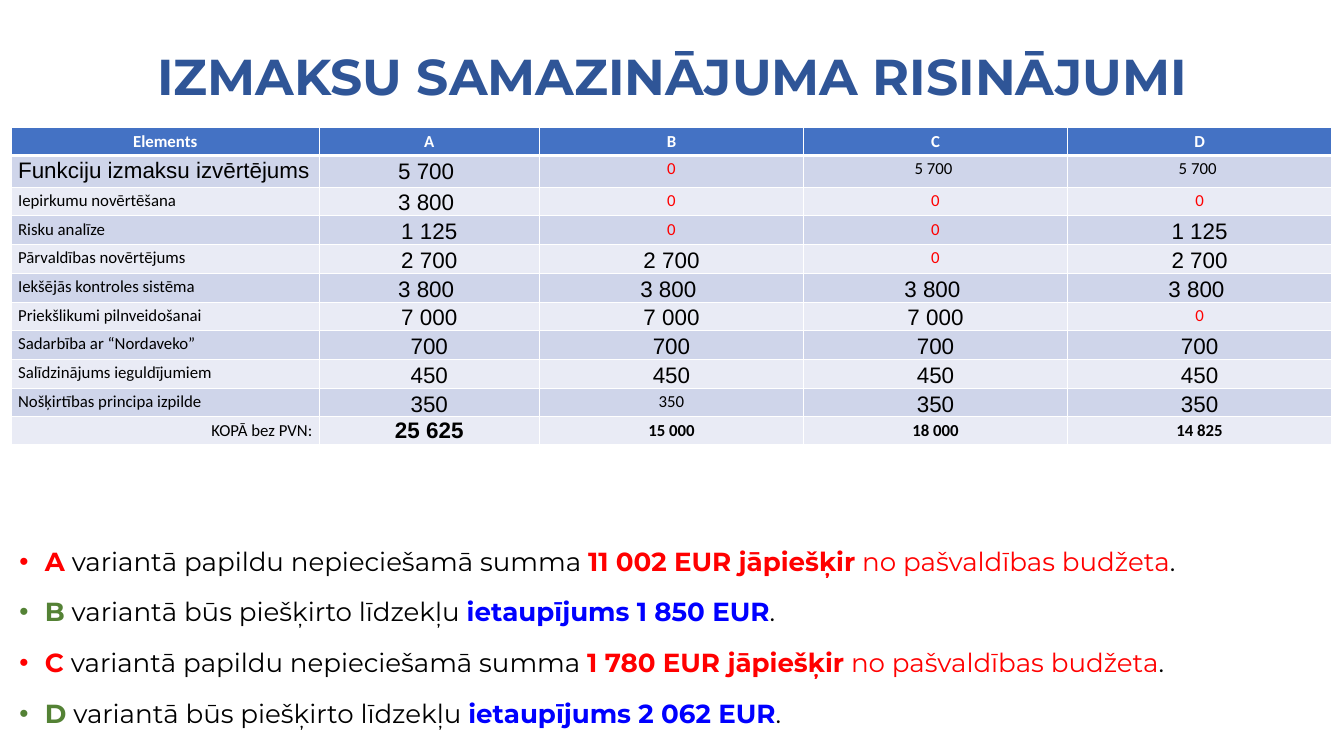
import pptx
import pptx.util
import pptx.dml.color
import pptx.enum.text
import pptx.oxml.ns
import lxml.etree

Cm = pptx.util.Cm
Pt = pptx.util.Pt
ALIGN = pptx.enum.text.PP_ALIGN
MID = pptx.enum.text.MSO_ANCHOR.MIDDLE
TOP = pptx.enum.text.MSO_ANCHOR.TOP
BLACK, WHITE, RED, GREEN, BLUE = "000000", "FFFFFF", "FF0000", "548235", "0000FF"

ROWS = [
    ["Elements", "A", "B", "C", "D"],
    ["Funkciju izmaksu izvērtējums", "5 700 ", "0", "5 700 ", "5 700 "],
    ["Iepirkumu novērtēšana", "3 800 ", "0", "0", "0"],
    ["Risku analīze", "1 125", "0", "0", "1 125"],
    ["Pārvaldības novērtējums", "2 700", "2 700", "0", "2 700"],
    ["Iekšējās kontroles sistēma"] + ["3 800 "] * 4,
    ["Priekšlikumi pilnveidošanai", "7 000", "7 000", "7 000", "0"],
    ["Sadarbība ar “Nordaveko”"] + ["700"] * 4,
    ["Salīdzinājums ieguldījumiem"] + ["450"] * 4,
    ["Nošķirtības principa izpilde"] + ["350"] * 4,
    ["KOPĀ bez PVN:", "25 625", "15 000", "18 000", "14 825"],
]
LAST = len(ROWS) - 1
SMALL = {(1, 3), (1, 4), (9, 2), (LAST, 2), (LAST, 3), (LAST, 4)}
WIDTHS = [11.63, 8.33, 9.98, 9.98, 9.98]

NEED = " variantā papildu nepieciešamā summa "
SAVE = " variantā būs piešķirto līdzekļu "
FROM = " no pašvaldības budžeta"
NOTES = [
    [("A", RED, True), (NEED, BLACK, False), ("11 002 EUR jāpiešķir", RED, True),
     (FROM, RED, False), (".", BLACK, False)],
    [("B", GREEN, True), (SAVE, BLACK, False), ("ietaupījums 1 850 EUR", BLUE, True),
     (".", BLACK, False)],
    [("C", RED, True), (NEED, BLACK, False), ("1 780 EUR jāpiešķir", RED, True),
     (FROM, RED, False), (".", BLACK, False)],
    [("D", GREEN, True), (SAVE, BLACK, False), ("ietaupījums 2 062 EUR", BLUE, True),
     (".", BLACK, False)],
]


def paint(color):
    return pptx.dml.color.RGBColor.from_string(color)


def apply(item, form):
    for key, value in form.items():
        setattr(item, key, value)


def add(node, tag, **attrs):
    return lxml.etree.SubElement(node, pptx.oxml.ns.qn(tag), **attrs)


class Deck:
    body = {"name": "Calibri", "size": Pt(18)}
    large = {"name": "Arial", "size": Pt(24)}
    head = {"name": "Montserrat", "size": Pt(54)}
    note = {"name": "Montserrat", "size": Pt(28)}

    def __init__(self, slide):
        self.slide = slide

    def words(self, para, text, form, color, bold=False):
        run = para.add_run()
        run.text = text
        apply(run.font, {**form, "bold": bold})
        run.font.color.rgb = paint(color)

    def title(self, text, box):
        shape = self.slide.shapes.title
        apply(shape, dict(zip(("left", "top", "width", "height"), map(Cm, box))))
        frame = shape.text_frame
        apply(frame, {"word_wrap": True, "vertical_anchor": MID, "margin_top": Cm(1.2),
                      "margin_bottom": 0, "auto_size": pptx.enum.text.MSO_AUTO_SIZE.NONE})
        para = frame.paragraphs[0]
        apply(para, {"alignment": ALIGN.CENTER, "line_spacing": 0.9})
        self.words(para, text, self.head, "2F5597", True)

    def border(self, cell, top):
        props = cell._tc.get_or_add_tcPr()
        for side in "LRTB":
            wide = 3 if top and side == "B" else 1
            line = add(props, "a:ln" + side, w=str(Pt(wide)))
            add(add(line, "a:solidFill"), "a:srgbClr", val=WHITE)

    def cell(self, cell, row, col, text):
        self.border(cell, row == 0)
        cell.fill.solid()
        cell.fill.fore_color.rgb = paint(
            "4472C4" if row == 0 else "CFD5EA" if row % 2 else "E9EBF5")
        zero = text == "0"
        wide = row > 0 and col > 0 and not zero and (row, col) not in SMALL
        para = cell.text_frame.paragraphs[0]
        para.alignment = ALIGN.CENTER
        if col == 0 and row > 0:
            para.alignment = ALIGN.RIGHT if row == LAST else ALIGN.LEFT
        if wide:
            apply(cell, {"margin_left": Cm(0.18), "margin_right": Cm(0.18),
                         "margin_top": 0, "margin_bottom": 0,
                         "vertical_anchor": MID if row == LAST else TOP})
            if row < LAST:
                para.line_spacing = 1.15
        form = self.large if wide or (row, col) == (1, 0) else self.body
        color = WHITE if row == 0 else RED if zero else BLACK
        self.words(para, text, form, color, row == 0 or (row == LAST and col > 0))

    def table(self, rows, widths, left, top, high):
        frame = self.slide.shapes.add_table(
            len(rows), len(widths), Cm(left), Cm(top), Cm(sum(widths)), Cm(high * len(rows)))
        grid = frame.table
        for col, width in zip(grid.columns, widths):
            col.width = Cm(width)
        for r, row in enumerate(rows):
            grid.rows[r].height = Cm(high)
            for c, text in enumerate(row):
                self.cell(grid.cell(r, c), r, c, text)

    def bullets(self, notes, box):
        frame = self.slide.shapes.add_textbox(*map(Cm, box)).text_frame
        frame.word_wrap = True
        for i, runs in enumerate(notes):
            para = frame.add_paragraph() if i else frame.paragraphs[0]
            props = para._p.get_or_add_pPr()
            props.set("marL", str(Cm(0.97)))
            props.set("indent", str(-Cm(0.97)))
            add(add(props, "a:buClr"), "a:srgbClr", val=runs[0][1])
            add(props, "a:buFont", typeface="Arial")
            add(props, "a:buChar", char="•")
            apply(para, {"alignment": ALIGN.JUSTIFY, "line_spacing": 0.9,
                         "space_before": Pt(24 if i else 0)})
            for text, color, bold in runs:
                self.words(para, text, self.note, color, bold)


def main():
    show = pptx.Presentation()
    apply(show, {"slide_width": Cm(50.8), "slide_height": Cm(28.58)})
    deck = Deck(show.slides.add_slide(show.slide_layouts[5]))
    deck.title("IZMAKSU SAMAZINĀJUMA RISINĀJUMI", (0, 0, 50.8, 4.75))
    deck.table(ROWS, WIDTHS, 0.43, 4.83, 1.04)
    deck.bullets(NOTES, (0.48, 20.62, 48.08, 7.42))
    show.save("out.pptx")


if __name__ == "__main__":
    main()
